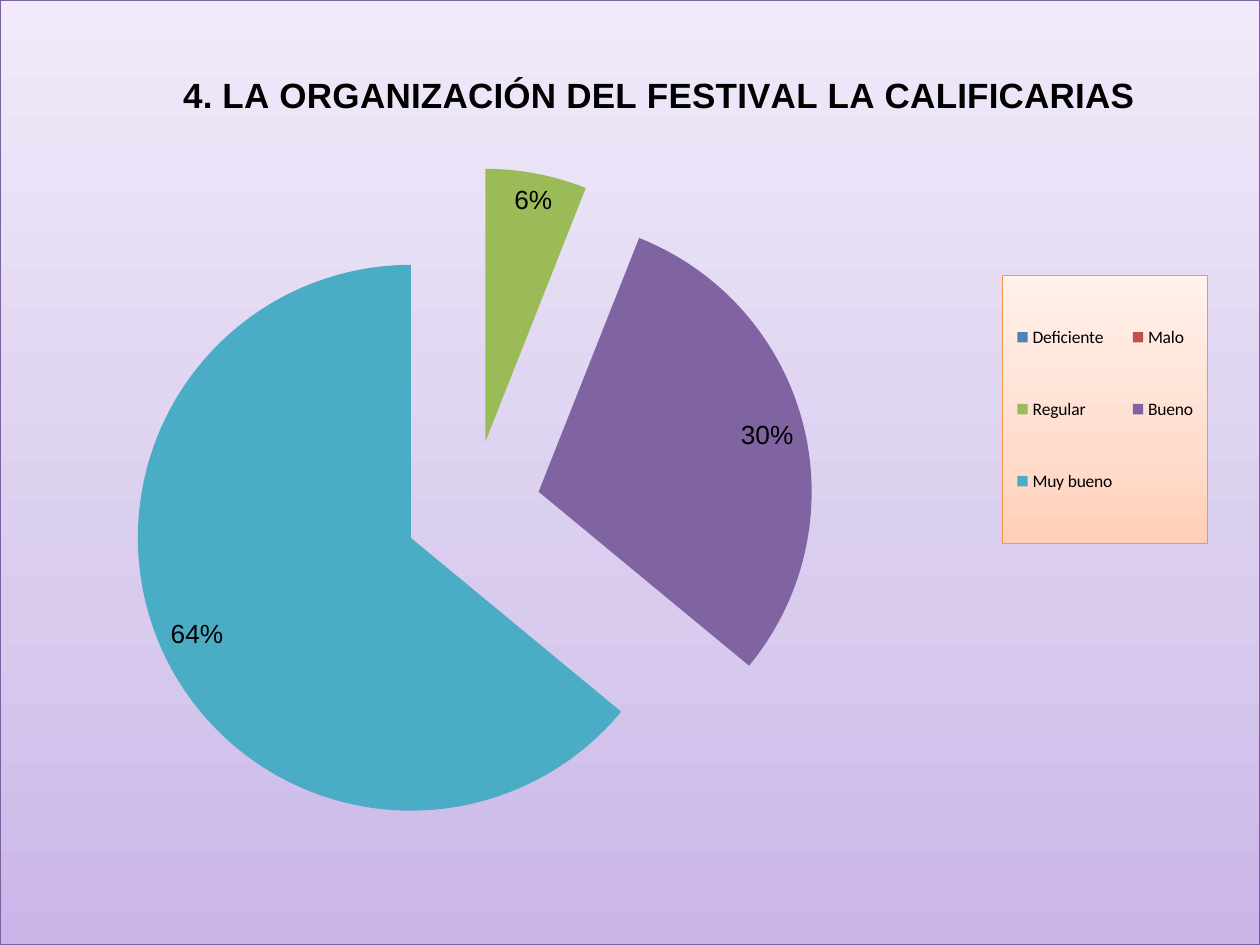
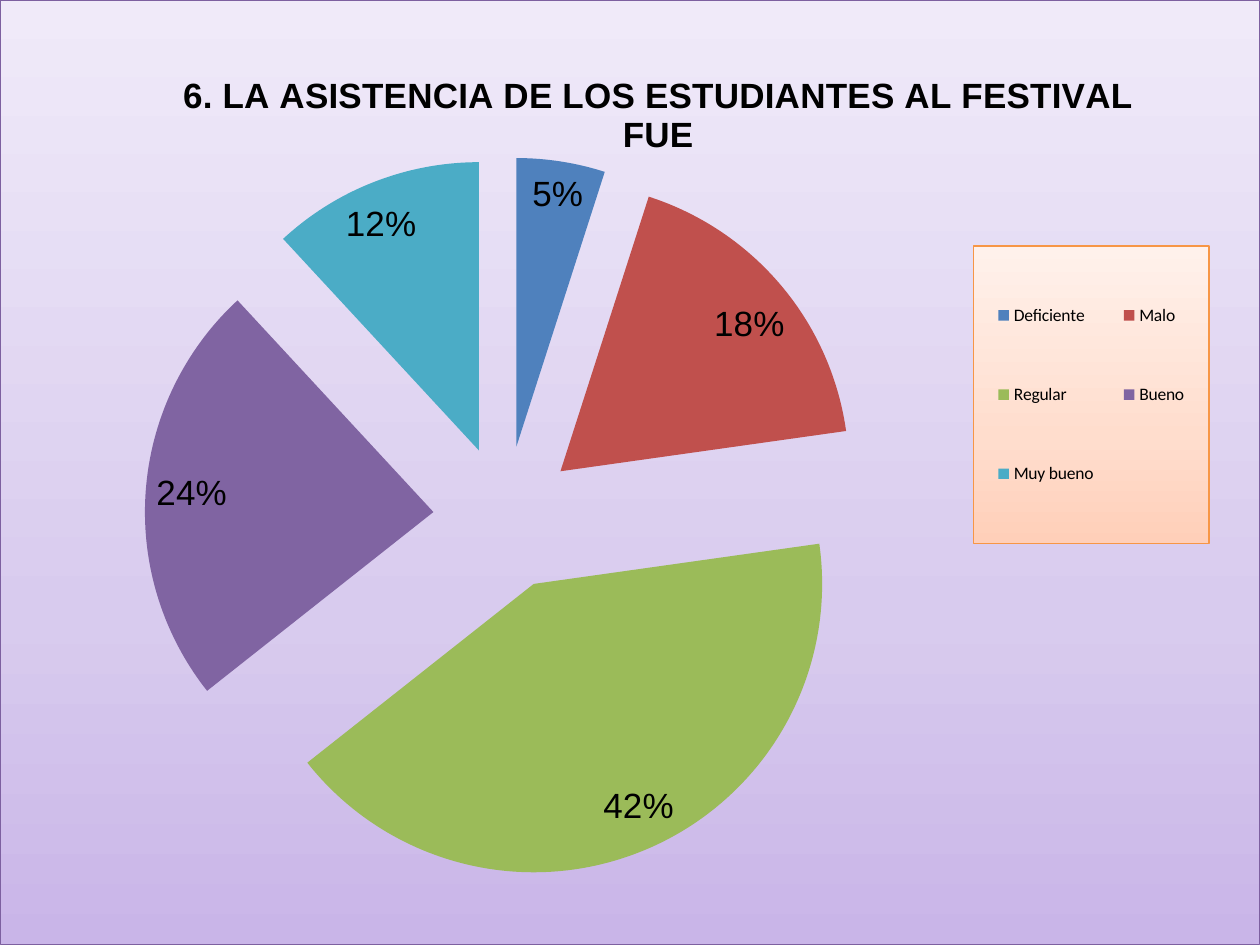
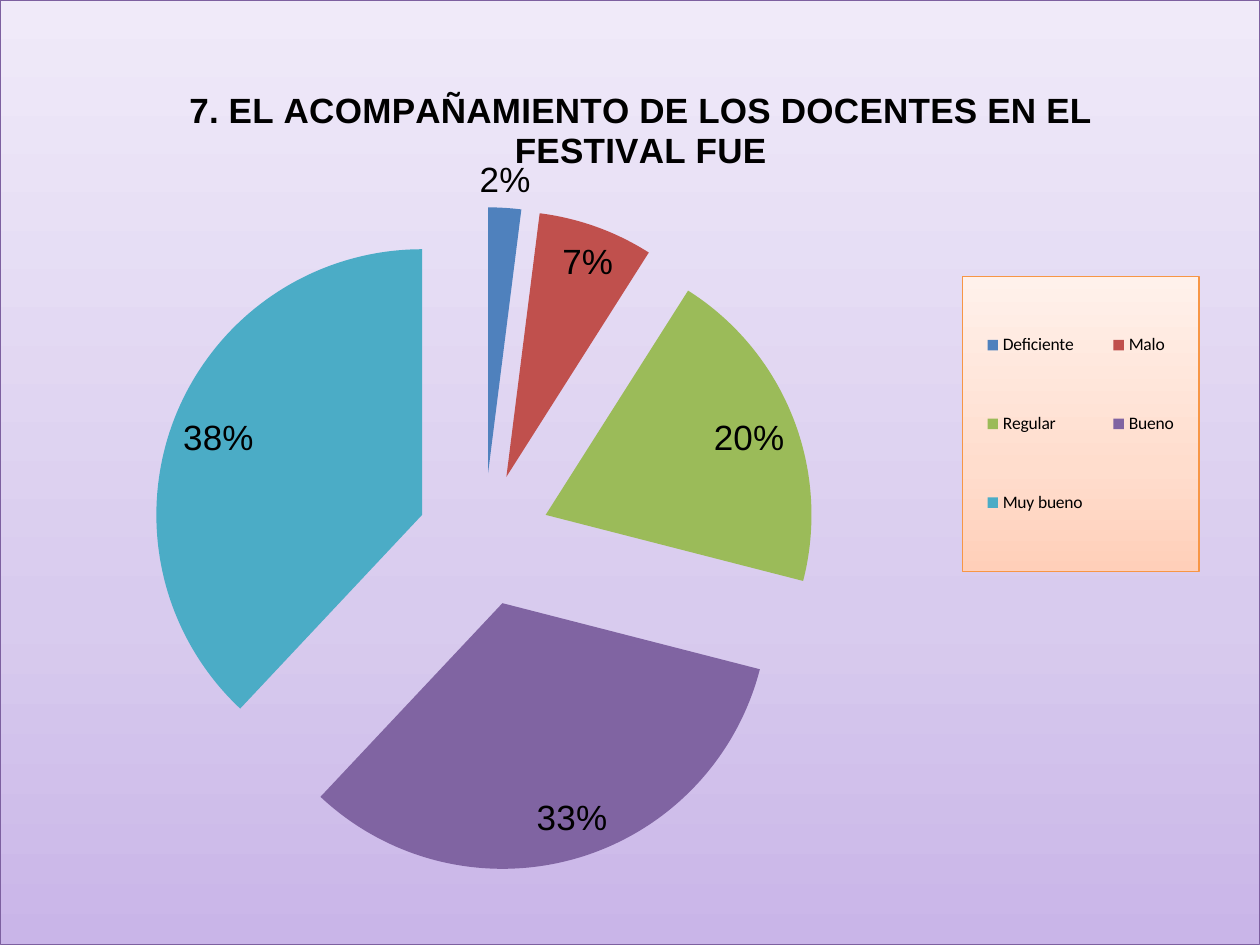
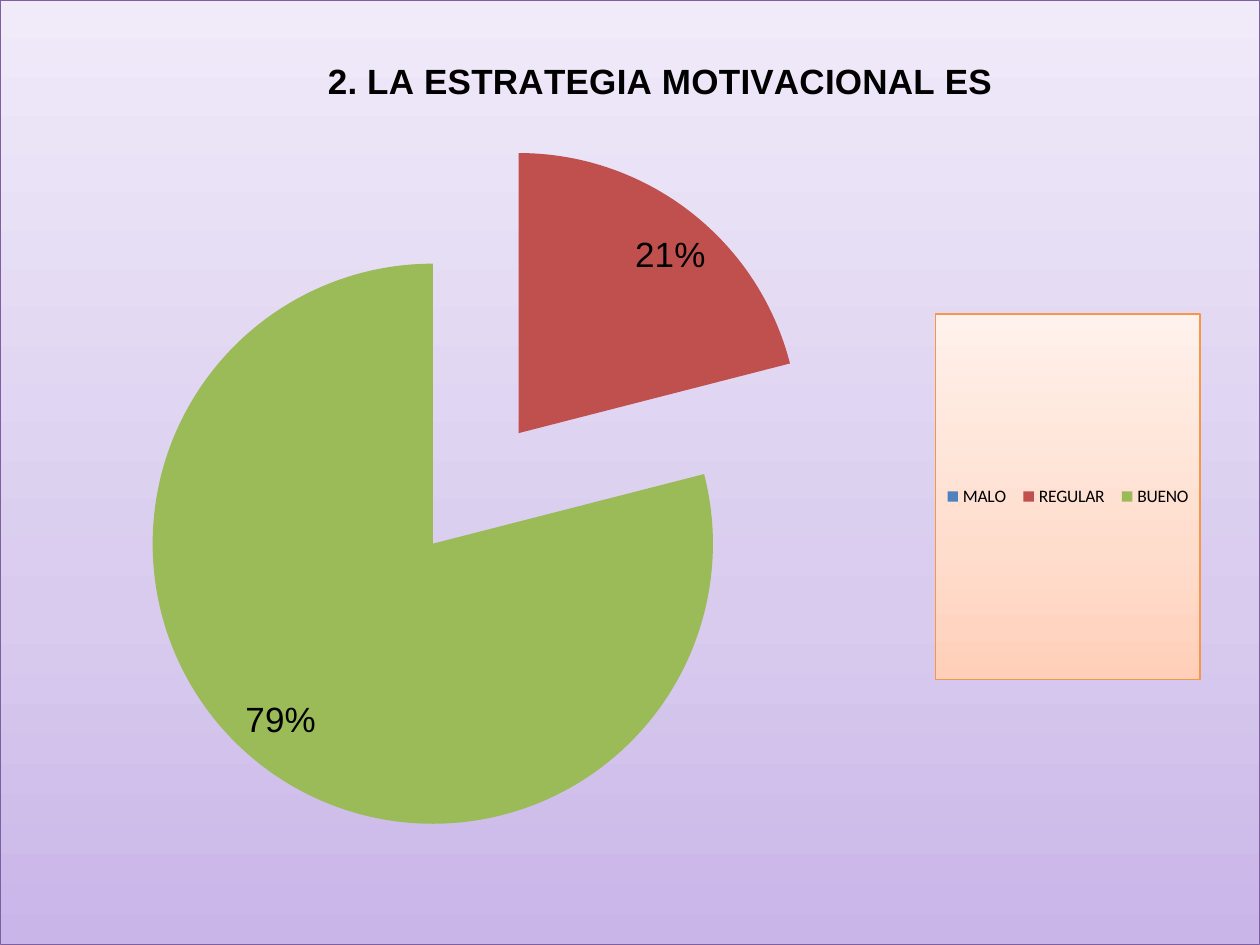
from dataclasses import dataclass

from pptx import Presentation
from pptx.chart.data import CategoryChartData
from pptx.dml.color import RGBColor
from pptx.enum.chart import XL_CHART_TYPE, XL_LABEL_POSITION, XL_LEGEND_POSITION
from pptx.oxml import parse_xml
from pptx.oxml.ns import nsdecls, qn
from pptx.util import Cm, Pt


# Shared look
@dataclass(frozen=True)
class Theme:
    ink: str = "000000"
    slices: tuple = ("4F81BD", "C0504D", "9BBB59", "8064A2", "4BACC6")
    page_gradient: tuple = ((0, "C9B5E8"), (35, "D8CBEE"), (100, "F0EAF9"))
    page_border: str = "7D60A0"
    legend_gradient: tuple = ((0, "FFCFB9"), (35, "FFDDCD"), (100, "FFF1EB"))
    legend_border: str = "F79646"
    title_font: str = "Arial"
    text_font: str = "Calibri"
    title_size: int = 20
    legend_size: int = 10
    explosion: int = 25


THEME = Theme()
WIDTH, HEIGHT = Cm(25.4), Cm(19.05)
RATINGS = ("Deficiente", "Malo", "Regular", "Bueno", "Muy bueno")


# One survey question; places are fractions of the page
@dataclass(frozen=True)
class Question:
    title: str
    answers: tuple
    shares: tuple
    title_place: tuple
    pie_place: tuple
    legend_place: tuple
    label_size: int = 20


QUESTIONS = (
    Question("4. LA ORGANIZACIÓN DEL FESTIVAL LA CALIFICARIAS", RATINGS,
             (0, 0, 6, 30, 64), (0.14, 0.07), (0.025, 0.177, 0.7, 0.723),
             (0.796, 0.291, 0.163, 0.284), label_size=15),
    Question("6. LA ASISTENCIA DE LOS ESTUDIANTES AL FESTIVAL FUE", RATINGS,
             (5, 18, 42, 24, 12), (0.14, 0.07), (0.031, 0.166, 0.74, 0.764),
             (0.773, 0.26, 0.187, 0.315)),
    Question("7. EL ACOMPAÑAMIENTO DE LOS DOCENTES EN EL FESTIVAL FUE", RATINGS,
             (2, 7, 20, 33, 38), (0.145, 0.086), (0.025, 0.219, 0.718, 0.704),
             (0.764, 0.292, 0.188, 0.313)),
    Question("2. LA ESTRATEGIA MOTIVACIONAL ES", ("MALO", "REGULAR", "BUENO"),
             (0, 21, 79), (0.255, 0.055), (0.038, 0.146, 0.679, 0.742),
             (0.743, 0.332, 0.21, 0.387)),
)


# Formatting helpers
def style_font(font, name, size, bold=False):
    font.name = name
    font.size = Pt(size)
    font.bold = bold
    font.color.rgb = RGBColor.from_string(THEME.ink)


def gradient_box(stops, border):
    """Properties of a box with a vertical gradient and a thin border."""
    stop_list = "".join(
        f'<a:gs pos="{position * 1000}"><a:srgbClr val="{color}"/></a:gs>'
        for position, color in stops)
    return parse_xml(
        f'<c:spPr {nsdecls("c", "a")}><a:gradFill rotWithShape="1">'
        f'<a:gsLst>{stop_list}</a:gsLst><a:lin ang="16200000" scaled="1"/></a:gradFill>'
        f'<a:ln w="{Pt(0.75)}"><a:solidFill><a:srgbClr val="{border}"/></a:solidFill></a:ln>'
        f'</c:spPr>')


def place(part, index, position, inner=False):
    """Give a chart part a manual layout as its child number index."""
    for layout in part.findall(qn("c:layout")):
        part.remove(layout)
    names = ("x", "y", "w", "h")[:len(position)]
    target = '<c:layoutTarget val="inner"/>' if inner else ""
    modes = "".join(f'<c:{name}Mode val="edge"/>' for name in names[:2])
    values = "".join(f'<c:{name} val="{value}"/>' for name, value in zip(names, position))
    part.insert(index, parse_xml(
        f'<c:layout {nsdecls("c")}><c:manualLayout>{target}{modes}{values}'
        f'</c:manualLayout></c:layout>'))


# Chart parts
def add_title(chart, question):
    chart.has_title = True
    paragraph = chart.chart_title.text_frame.paragraphs[0]
    span = paragraph.add_run()
    span.text = question.title
    style_font(span.font, THEME.title_font, THEME.title_size, bold=True)
    place(chart.element.xpath("c:chart/c:title")[0], 1, question.title_place)


def add_legend(chart, question):
    chart.has_legend = True
    chart.legend.position = XL_LEGEND_POSITION.RIGHT
    chart.legend.include_in_layout = False
    style_font(chart.legend.font, THEME.text_font, THEME.legend_size)
    legend = chart.element.xpath("c:chart/c:legend")[0]
    place(legend, 1, question.legend_place)
    legend.find(qn("c:overlay")).addnext(
        gradient_box(THEME.legend_gradient, THEME.legend_border))


def style_slices(chart, question):
    series = chart.plots[0].series[0]
    name = chart.element.xpath("c:chart/c:plotArea//c:ser/c:tx")[0]
    name.addnext(parse_xml(f'<c:explosion {nsdecls("c")} val="{THEME.explosion}"/>'))
    for index, color in enumerate(THEME.slices[:len(question.shares)]):
        fill = series.points[index].format.fill
        fill.solid()
        fill.fore_color.rgb = RGBColor.from_string(color)


def add_labels(chart, question):
    labels = chart.plots[0].series[0].data_labels
    labels.show_value = False
    labels.show_percentage = True
    labels.number_format = "0%"
    labels.number_format_is_linked = False
    labels.position = XL_LABEL_POSITION.BEST_FIT
    style_font(labels.font, THEME.title_font, question.label_size)
    # Empty slices carry no label
    label_list = chart.element.xpath("c:chart/c:plotArea//c:ser/c:dLbls")[0]
    empty = [index for index, share in enumerate(question.shares) if share == 0]
    for order, index in enumerate(empty):
        label_list.insert(order, parse_xml(
            f'<c:dLbl {nsdecls("c")}><c:idx val="{index}"/><c:delete val="1"/></c:dLbl>'))


def add_pie_page(deck, question):
    page = deck.slides.add_slide(deck.slide_layouts[6])
    data = CategoryChartData()
    data.categories = question.answers
    data.add_series("Series 1", question.shares)
    chart = page.shapes.add_chart(
        XL_CHART_TYPE.PIE, Cm(0), Cm(0), WIDTH, HEIGHT, data).chart
    style_font(chart.font, THEME.text_font, THEME.legend_size)
    chart.plots[0].vary_by_categories = True
    add_title(chart, question)
    add_legend(chart, question)
    style_slices(chart, question)
    add_labels(chart, question)
    place(chart.element.xpath("c:chart/c:plotArea")[0], 0, question.pie_place, inner=True)
    chart.element.find(qn("c:chart")).addnext(
        gradient_box(THEME.page_gradient, THEME.page_border))


def main():
    deck = Presentation()
    deck.slide_width, deck.slide_height = WIDTH, HEIGHT
    for question in QUESTIONS:
        add_pie_page(deck, question)
    deck.save("out.pptx")


if __name__ == "__main__":
    main()
